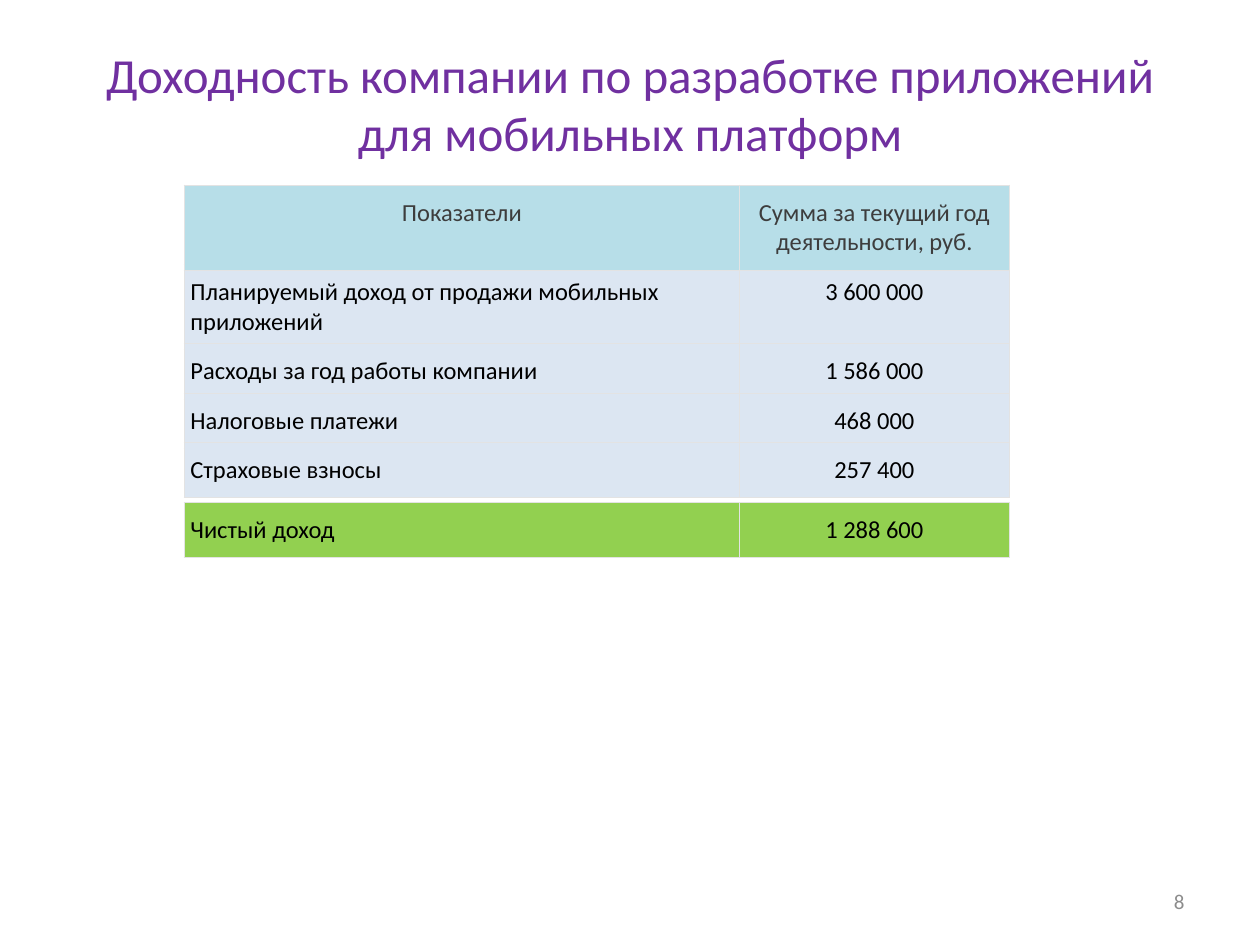
from pptx import Presentation
from pptx.dml.color import RGBColor
from pptx.enum.text import MSO_ANCHOR as Anchor, PP_ALIGN as Align
from pptx.oxml.ns import qn
from pptx.util import Pt
from lxml.etree import SubElement

PURPLE = RGBColor(0x70, 0x30, 0xA0)
BLACK = RGBColor(0, 0, 0)
DARK_GRAY = RGBColor(0x3D, 0x3D, 0x3D)
GRAY = RGBColor(0x8C, 0x8C, 0x8C)
BORDER = RGBColor(0xE3, 0xE3, 0xE3)
TEAL = RGBColor(0xB7, 0xDE, 0xE8)
PALE_BLUE = RGBColor(0xDC, 0xE6, 0xF2)
GREEN = RGBColor(0x92, 0xD0, 0x50)

TABLE_LEFT = 105.2
COLUMN_WIDTHS = (317.5, 154)
TALL, SHORT = 48.8, 31.6

# Strips overlap slightly, so the order is from back to front:
# top, height, label, amount, fill, text colour, label alignment
STRIPS = [
    (151.2, TALL, "Планируемый доход от продажи мобильных приложений", "3 600 000",
     PALE_BLUE, BLACK, Align.LEFT),
    (105.8, TALL, "Показатели", "Сумма за текущий год деятельности, руб.",
     TEAL, DARK_GRAY, Align.CENTER),
    (196.5, SHORT, "Расходы за год работы компании", "1 586 000",
     PALE_BLUE, BLACK, Align.LEFT),
    (224.7, SHORT, "Налоговые платежи", "468 000", PALE_BLUE, BLACK, Align.LEFT),
    (287.2, SHORT, "Чистый доход", "1 288 600", GREEN, BLACK, Align.LEFT),
    (252.9, SHORT, "Страховые взносы", "257 400", PALE_BLUE, BLACK, Align.LEFT),
]


def write_text(text_frame, text, size=14, color=BLACK, align=Align.LEFT, anchor=Anchor.TOP):
    text_frame.word_wrap = True
    text_frame.vertical_anchor = anchor
    paragraph = text_frame.paragraphs[0]
    paragraph.alignment = align
    run = paragraph.add_run()
    run.text = text
    run.font.name = "Calibri"
    run.font.size = Pt(size)
    run.font.color.rgb = color


def add_borders(cell):
    properties = cell._tc.get_or_add_tcPr()
    for side in ("a:lnL", "a:lnR", "a:lnT", "a:lnB"):
        line = SubElement(properties, qn(side), w=str(Pt(0.75)))
        fill = SubElement(line, qn("a:solidFill"))
        SubElement(fill, qn("a:srgbClr"), val=str(BORDER))


def add_title(slide, left, top, width, height):
    title = slide.shapes.title
    title.left, title.top, title.width, title.height = map(Pt, (left, top, width, height))
    write_text(title.text_frame, "Доходность компании по разработке приложений для мобильных платформ",
               size=28, color=PURPLE, align=Align.CENTER)


def add_strip(slide, left, top, height, label, amount, fill, color, label_align):
    """One-row table: a label and its amount."""
    table = slide.shapes.add_table(1, 2, Pt(left), Pt(top),
                                   Pt(sum(COLUMN_WIDTHS)), Pt(height)).table
    table.first_row = table.horz_banding = False
    for column, width in zip(table.columns, COLUMN_WIDTHS):
        column.width = Pt(width)
    for cell, text, align in zip(table.rows[0].cells, (label, amount), (label_align, Align.CENTER)):
        cell.margin_left = cell.margin_right = Pt(3.6)
        cell.margin_top = cell.margin_bottom = Pt(7.2)
        add_borders(cell)
        cell.fill.solid()
        cell.fill.fore_color.rgb = fill
        write_text(cell.text_frame, text, color=color, align=align)


def add_page_number(slide, left, top, width, height):
    box = slide.shapes.add_textbox(Pt(left), Pt(top), Pt(width), Pt(height))
    write_text(box.text_frame, "8", size=12, color=GRAY, align=Align.RIGHT, anchor=Anchor.MIDDLE)


def main():
    presentation = Presentation()
    presentation.slide_width, presentation.slide_height = Pt(720), Pt(540)
    slide = presentation.slides.add_slide(presentation.slide_layouts[5])

    add_title(slide, 36, 21.6, 648, 72.7)
    for strip in STRIPS:
        add_strip(slide, TABLE_LEFT, *strip)
    add_page_number(slide, 516, 500.5, 168, 28.8)

    presentation.save("out.pptx")


if __name__ == "__main__":
    main()
